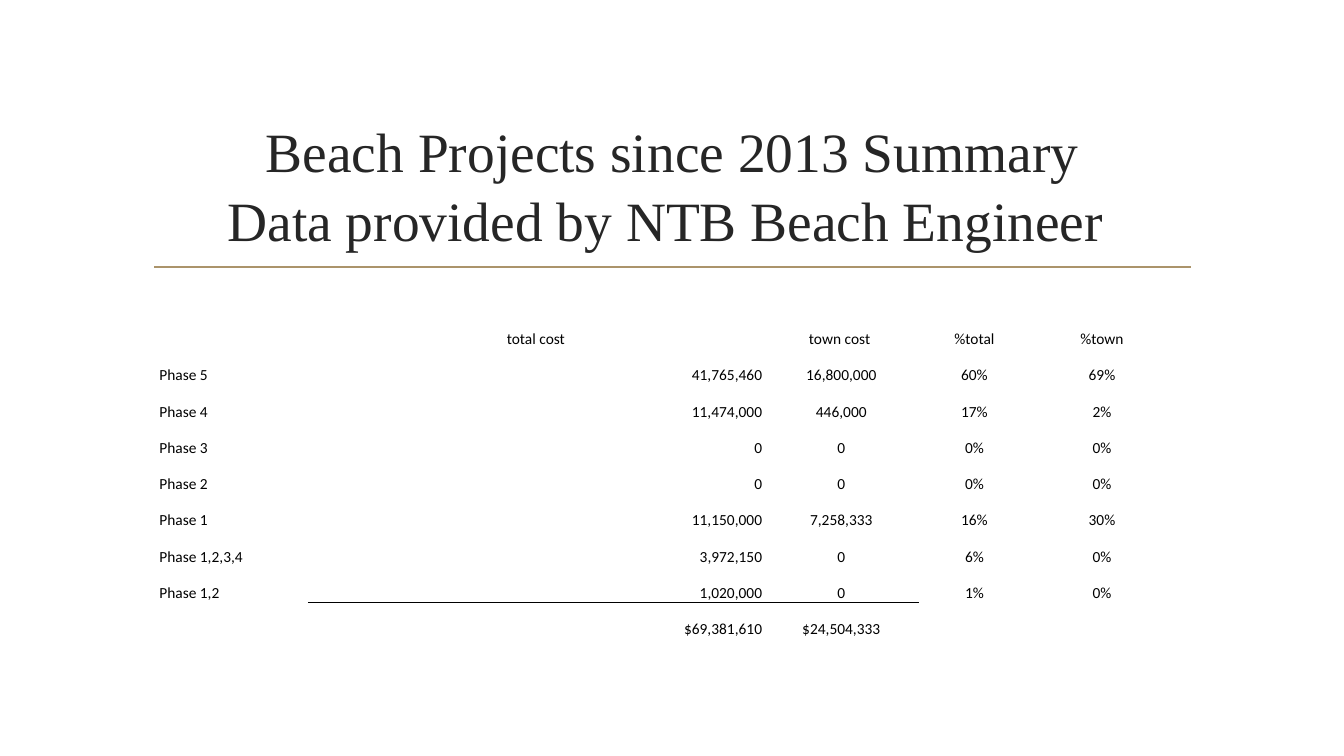
from lxml import etree
from pptx import Presentation
from pptx.dml.color import RGBColor
from pptx.enum.shapes import MSO_CONNECTOR
from pptx.enum.text import MSO_ANCHOR, MSO_AUTO_SIZE, PP_ALIGN
from pptx.oxml import parse_xml
from pptx.oxml.ns import nsdecls, qn
from pptx.util import Inches, Pt

LEFT, CENTER, RIGHT = PP_ALIGN.LEFT, PP_ALIGN.CENTER, PP_ALIGN.RIGHT
MIDDLE, BOTTOM = MSO_ANCHOR.MIDDLE, MSO_ANCHOR.BOTTOM
NO_FIT = MSO_AUTO_SIZE.NONE
STRAIGHT = MSO_CONNECTOR.STRAIGHT
TITLE_ONLY = 5
GRID = 100

COLORS = {"title": "262626", "text": "000000", "rule": "AB946B"}
TITLE_FONT = {"name": "Times New Roman", "size": Pt(39.6), "bold": False}
TABLE_FONT = {"name": "Calibri", "size": Pt(11), "bold": False}
TITLE_FRAME = {"vertical_anchor": MIDDLE, "word_wrap": True,
               "auto_size": NO_FIT, "margin_top": Inches(0.13)}
CELL_FORMAT = {"vertical_anchor": BOTTOM, "margin_left": Inches(0.01),
               "margin_right": Inches(0.01), "margin_top": Inches(0.01),
               "margin_bottom": 0}
TABLE_FORMAT = {"first_row": False, "horz_banding": False}

TITLE = "Beach Projects since 2013 Summary\vData provided by NTB Beach Engineer "
COLUMN_WIDTHS = [11.18, 33.83, 11.63, 8.18, 10.8]
ALIGNMENTS = [LEFT, RIGHT, CENTER, CENTER, CENTER]
COSTS = [
    ["", "total cost", "town cost ", "%total", "%town"],
    ["Phase 5", "41,765,460", "16,800,000", "60%", "69%"],
    ["Phase 4", "11,474,000", "446,000", "17%", "2%"],
    ["Phase 3", "0", "0", "0%", "0%"],
    ["Phase 2", "0", "0", "0%", "0%"],
    ["Phase 1", "11,150,000", "7,258,333", "16%", "30%"],
    ["Phase 1,2,3,4", "3,972,150", "0", "6%", "0%"],
    ["Phase 1,2", "1,020,000", "0", "1%", "0%"],
    ["", "$69,381,610", "$24,504,333", "", ""],
]
TOTAL_ROW = len(COSTS) - 1
TOTAL_COLUMNS = (1, 2)


def apply(target, values):
    for name, value in values.items():
        setattr(target, name, value)


class SlideBuilder:
    def __init__(self, deck):
        self.deck = deck
        self.page = deck.slides.add_slide(deck.slide_layouts[TITLE_ONLY])

    def across(self, columns):
        return round(self.deck.slide_width * columns / GRID)

    def down(self, rows):
        return round(self.deck.slide_height * rows / GRID)

    def style(self, para, font, color, alignment):
        para.alignment = alignment
        apply(para.font, font)
        para.font.color.rgb = RGBColor.from_string(COLORS[color])

    def title(self, text, left, top, width, height):
        box = self.page.shapes.title
        apply(box, {"left": self.across(left), "top": self.down(top),
                    "width": self.across(width), "height": self.down(height)})
        frame = box.text_frame
        apply(frame, TITLE_FRAME)
        frame.text = text
        para = frame.paragraphs[0]
        para.line_spacing = 1.03
        self.style(para, TITLE_FONT, "title", CENTER)
        for span in para.runs:
            apply(span.font, TITLE_FONT)

    def rule(self, left, right, top):
        line = self.page.shapes.add_connector(
            STRAIGHT, self.across(left), self.down(top), self.across(right), self.down(top))
        line.line.color.rgb = RGBColor.from_string(COLORS["rule"])
        line.line.width = Pt(1.25)
        etree.SubElement(line._element.spPr, qn("a:effectLst"))

    def border(self, cell, side):
        cell._tc.get_or_add_tcPr().insert(0, parse_xml(
            f'<a:{side} {nsdecls("a")} w="{Pt(0.5)}"><a:solidFill>'
            f'<a:srgbClr val="{COLORS["text"]}"/></a:solidFill></a:{side}>'))

    def table(self, records, widths, left, top, row_height):
        table = self.page.shapes.add_table(
            len(records), len(widths), self.across(left), self.down(top),
            self.across(sum(widths)), self.down(row_height * len(records))).table
        apply(table, TABLE_FORMAT)
        for column, width in zip(table.columns, widths):
            column.width = self.across(width)
        for row, record in enumerate(records):
            for column, text in enumerate(record):
                cell = table.cell(row, column)
                apply(cell, CELL_FORMAT)
                cell.fill.background()
                cell.text = text
                alignment = ALIGNMENTS[column] if row else CENTER
                self.style(cell.text_frame.paragraphs[0], TABLE_FONT, "text", alignment)
        for column in TOTAL_COLUMNS:
            self.border(table.cell(TOTAL_ROW - 1, column), "lnB")
            self.border(table.cell(TOTAL_ROW, column), "lnT")


def main():
    deck = Presentation()
    deck.slide_width, deck.slide_height = Inches(13.33), Inches(7.5)
    summary = SlideBuilder(deck)
    summary.rule(left=11.48, right=88.6, top=35.33)
    summary.title(TITLE, left=10.65, top=14.27, width=78.77, height=19.07)
    summary.table(COSTS, COLUMN_WIDTHS, left=11.78, top=41.33, row_height=4.8)
    deck.save("out.pptx")


if __name__ == "__main__":
    main()
